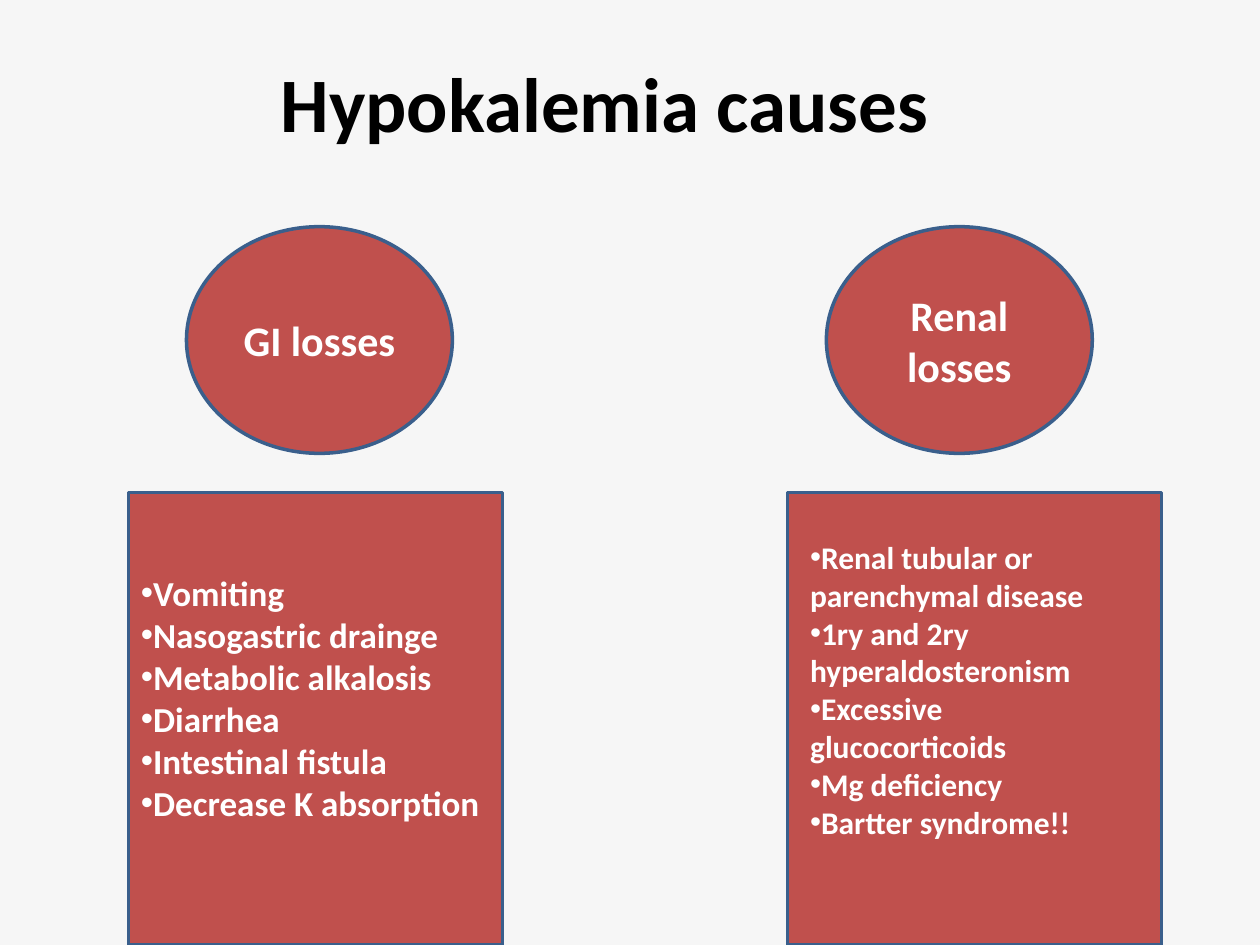
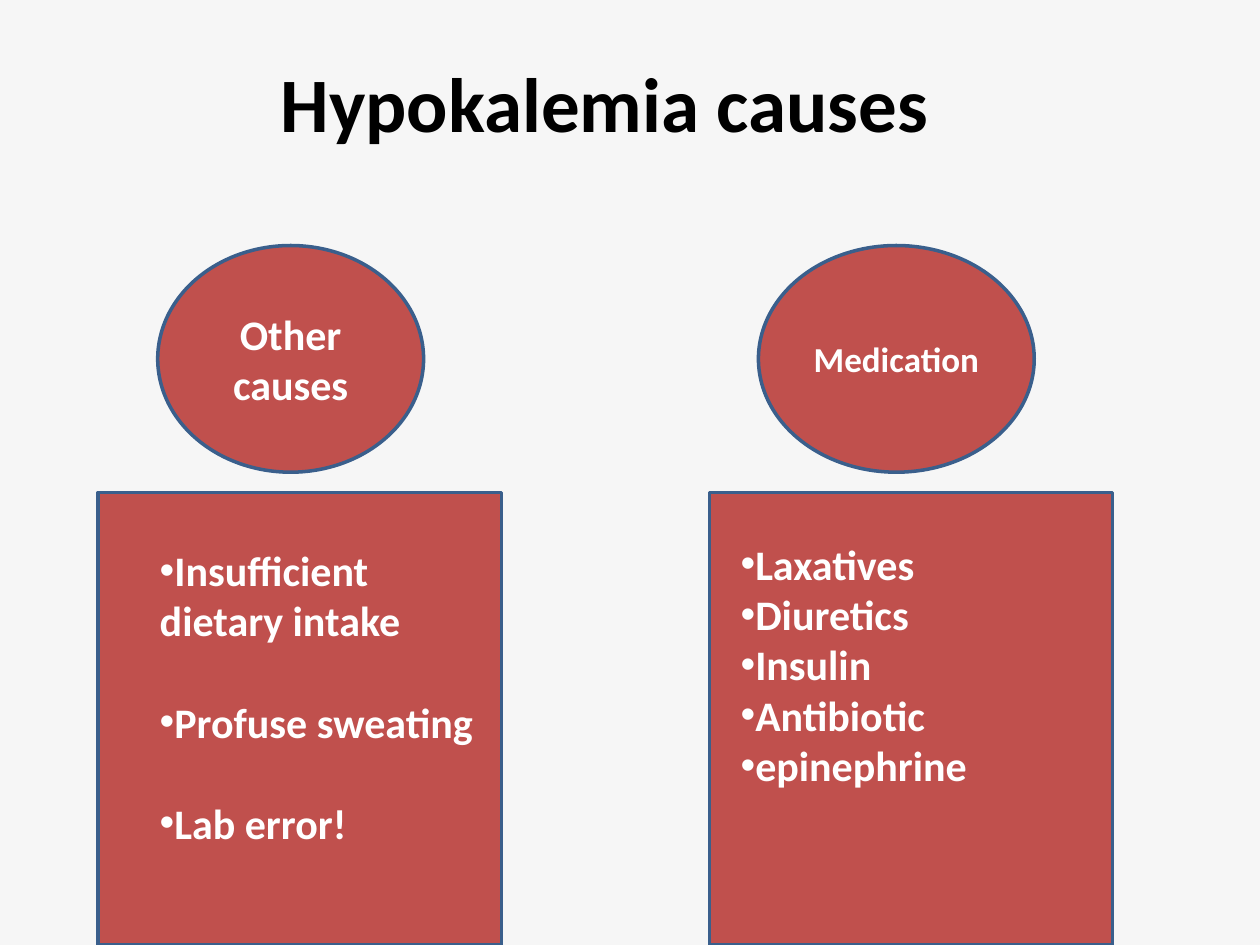
from dataclasses import dataclass
from typing import NamedTuple, Optional

from lxml.etree import SubElement
from pptx import Presentation
from pptx.dml.color import RGBColor
from pptx.enum.shapes import MSO_SHAPE
from pptx.enum.text import MSO_ANCHOR, MSO_AUTO_SIZE, PP_ALIGN
from pptx.oxml.ns import qn
from pptx.util import Cm, Pt

PAGE, RED, BLUE, WHITE, BLACK = "F6F6F6", "C0504D", "3A5F8C", "FFFFFF", "000000"
FONT = "Calibri"
TITLE = "Hypokalemia causes"
INSET = 0.25  # default side margin of a text frame, in cm


class Box(NamedTuple):
    left: float
    top: float
    width: float
    height: float


@dataclass
class Cause:
    name: str
    size: int
    oval: Box
    panel: Box
    items: list[str]
    points: int
    area: Optional[Box] = None  # None: the list fills the panel itself
    gap: int = 0


HEAD = Box(1.4, 0, 21.59, 4.09)


def oval(left: float, top: float, width: float = 5.36) -> Box:
    return Box(left, top, width, 4.57)


def panel(left: float, width: float) -> Box:
    return Box(left, 9.93, width, 9.12)


def area(left: float, width: float, top: float = 10.72) -> Box:
    return Box(left, top, width, 6.4)


SLIDES = [
    [
        Cause("GI losses", 24, oval(3.76, 4.57), panel(2.59, 7.54),
              ["Vomiting", "Nasogastric drainge", "Metabolic alkalosis",
               "Diarrhea", "Intestinal fistula", "Decrease K absorption"], 20),
        Cause("Renal losses", 24, oval(16.66, 4.57), panel(15.88, 7.54),
              ["Renal tubular or parenchymal disease",
               "1ry and 2ry hyperaldosteronism", "Excessive glucocorticoids",
               "Mg deficiency", "Bartter syndrome!!"], 18, area(16.08, 7.14)),
    ],
    [
        Cause("Other causes", 24, oval(3.18, 4.95), panel(1.98, 8.13),
              ["Insufficient dietary intake", "Profuse sweating", "Lab error!"],
              24, area(2.97, 7.34, 10.85), gap=29),
        Cause("Medication", 20, oval(15.29, 4.95, 5.56), panel(14.3, 8.13),
              ["Laxatives", "Diuretics", "Insulin", "Antibiotic", "epinephrine"],
              24, area(14.68, 7.54)),
    ],
]


def rgb(code: str) -> RGBColor:
    return RGBColor.from_string(code)


def apply(target, values: dict) -> None:
    for key, value in values.items():
        setattr(target, key, value)


def place(shape, box: Box) -> None:
    apply(shape, {key: Cm(value) for key, value in box._asdict().items()})


def paint(shape) -> None:
    shape.fill.solid()
    shape.fill.fore_color.rgb = rgb(RED)
    shape.line.color.rgb = rgb(BLUE)
    shape.line.width = Pt(2)


def style(font, size: int, color: str = WHITE) -> None:
    apply(font, {"name": FONT, "size": Pt(size), "bold": True})
    font.color.rgb = rgb(color)


def setup(frame, anchor: MSO_ANCHOR) -> None:
    apply(frame, {"word_wrap": True, "auto_size": MSO_AUTO_SIZE.NONE,
                  "vertical_anchor": anchor,
                  "margin_left": Cm(INSET), "margin_right": Cm(INSET)})


def label(shape, text: str, size: int, color: str = WHITE) -> None:
    """Write one centred line of bold text."""
    frame = shape.text_frame
    setup(frame, MSO_ANCHOR.MIDDLE)
    frame.text = text
    line = frame.paragraphs[0]
    line.alignment = PP_ALIGN.CENTER
    style(line.runs[0].font, size, color)


def add_form(slide, kind: MSO_SHAPE, box: Box):
    shape = slide.shapes.add_shape(kind, *map(Cm, box))
    shape.shadow.inherit = False
    paint(shape)
    return shape


def fill_list(body, cause: Cause) -> None:
    frame = body.text_frame
    setup(frame, MSO_ANCHOR.TOP if cause.area else MSO_ANCHOR.MIDDLE)
    frame.text = "\n".join(cause.items)
    for rank, line in enumerate(frame.paragraphs):
        apply(line, {"alignment": PP_ALIGN.LEFT,
                     "space_before": Pt(cause.gap if rank else 0)})
        props = line._p.get_or_add_pPr()
        props.set("marL", "0")
        props.set("indent", "0")
        SubElement(props, qn("a:buChar")).set("char", "•")
        style(line.runs[0].font, cause.points)


def add_cause(slide, cause: Cause, body) -> None:
    label(add_form(slide, MSO_SHAPE.OVAL, cause.oval), cause.name, cause.size)
    place(body, cause.area or cause.panel)
    fill_list(body, cause)
    if cause.area:
        add_form(slide, MSO_SHAPE.RECTANGLE, cause.panel)
    else:
        paint(body)
        body.text_frame.margin_bottom = Cm(0.97)
    slide.shapes._spTree.append(body._element)  # list in front of its panel


def main() -> None:
    deck = Presentation()
    apply(deck, {"slide_width": Cm(25.4), "slide_height": Cm(19.05)})
    for causes in SLIDES:
        slide = deck.slides.add_slide(deck.slide_layouts[3])
        back = slide.background.fill
        back.solid()
        back.fore_color.rgb = rgb(PAGE)
        title, *bodies = slide.placeholders
        place(title, HEAD)
        label(title, TITLE, 44, BLACK)
        for cause, body in zip(causes, bodies):
            add_cause(slide, cause, body)
    deck.save("out.pptx")


if __name__ == "__main__":
    main()
